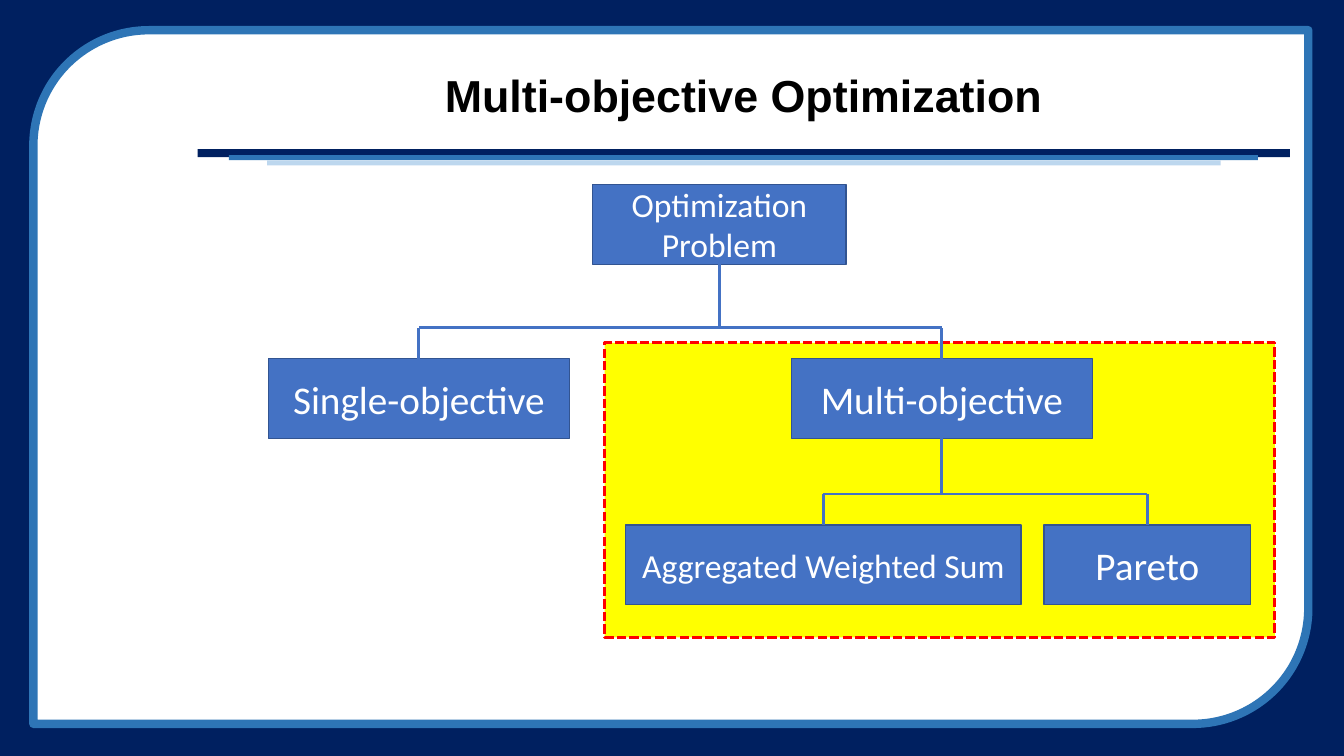
from lxml.etree import SubElement
from pptx import Presentation
from pptx.dml.color import RGBColor
from pptx.enum.dml import MSO_LINE
from pptx.enum.shapes import MSO_CONNECTOR, MSO_SHAPE
from pptx.enum.text import MSO_ANCHOR, PP_ALIGN
from pptx.oxml.ns import qn
from pptx.util import Cm, Pt

COLORS = {
    "navy": "002060", "blue": "2E75B6", "pale": "BDD7EE", "white": "FFFFFF",
    "yellow": "FFFF00", "red": "FF0000", "box": "4472C4", "edge": "325491",
    "black": "000000",
}
BOX_HEIGHT = 2.01


def add_block(kind, left, top, width, height, fill, line=None, weight=1):
    block = page.shapes.add_shape(kind, Cm(left), Cm(top), Cm(width), Cm(height))
    block.shadow.inherit = False
    block.fill.solid()
    block.fill.fore_color.rgb = RGBColor.from_string(COLORS[fill])
    if line:
        block.line.color.rgb = RGBColor.from_string(COLORS[line])
        block.line.width = Pt(weight)
    else:
        block.line.fill.background()
    return block


def write_text(box, text, font, size, color, bold=False):
    frame = box.text_frame
    frame.word_wrap = True
    frame.vertical_anchor = MSO_ANCHOR.MIDDLE
    frame.text = text
    para = frame.paragraphs[0]
    para.alignment = PP_ALIGN.CENTER
    span = para.runs[0]
    span.font.name = font
    span.font.size = Pt(size)
    span.font.bold = bold
    span.font.color.rgb = RGBColor.from_string(COLORS[color])
    return para


deck = Presentation()
deck.slide_width = Cm(33.87)
deck.slide_height = Cm(19.05)
page = deck.slides.add_slide(deck.slide_layouts[6])

add_block(MSO_SHAPE.RECTANGLE, 0, 0, 33.87, 19.05, "navy")
border = add_block(MSO_SHAPE.ROUND_2_DIAG_RECTANGLE, 0.84, 0.76, 32.13, 17.48,
                   "white", "blue", 6)
border.rotation = 180

for left, top, width, height, fill in [
    (4.98, 3.76, 27.53, 0.2, "navy"),
    (5.77, 3.91, 25.93, 0.13, "blue"),
    (6.73, 4.04, 24.03, 0.13, "pale"),
]:
    add_block(MSO_SHAPE.RECTANGLE, left, top, width, height, fill)

highlight = add_block(MSO_SHAPE.RECTANGLE, 15.24, 8.64, 16.89, 7.42, "yellow", "red", 2.25)
highlight.line.dash_style = MSO_LINE.SQUARE_DOT

title = page.shapes.add_textbox(Cm(4.98), Cm(1.24), Cm(27.53), Cm(2.46))
title_para = write_text(title, "Multi-objective Optimization", "Arial", 32, "black", True)
title_para.line_spacing = 0.9

nodes = {
    "Optimization Problem": (14.94, 4.65, 6.38, 24),
    "Single-objective": (6.76, 9.04, 7.59, 28),
    "Multi-objective": (19.94, 9.04, 7.59, 28),
    "Aggregated Weighted Sum": (15.77, 13.23, 9.96, 24),
    "Pareto": (26.31, 13.23, 5.21, 28),
}
for label, (left, top, width, size) in nodes.items():
    box = add_block(MSO_SHAPE.RECTANGLE, left, top, width, BOX_HEIGHT, "box", "edge")
    write_text(box, label, "Calibri", size, "white")

centers = {label: left + width / 2 for label, (left, top, width, size) in nodes.items()}
branches = [
    ("Optimization Problem", ["Single-objective", "Multi-objective"], 8.26),
    ("Multi-objective", ["Aggregated Weighted Sum", "Pareto"], 12.45),
]
for parent, children, bus in branches:
    middle = centers[parent]
    ends = [centers[child] for child in children]
    lines = [(end, nodes[child][1], end, bus) for child, end in zip(children, ends)]
    lines.append((ends[0], bus, ends[-1], bus))
    lines.append((middle, nodes[parent][1] + BOX_HEIGHT, middle, bus))
    for points in lines:
        link = page.shapes.add_connector(MSO_CONNECTOR.STRAIGHT, *map(Cm, points))
        link.line.color.rgb = RGBColor.from_string(COLORS["box"])
        link.line.width = Pt(2)
        SubElement(link._element.spPr, qn("a:effectLst"))

deck.save("out.pptx")
